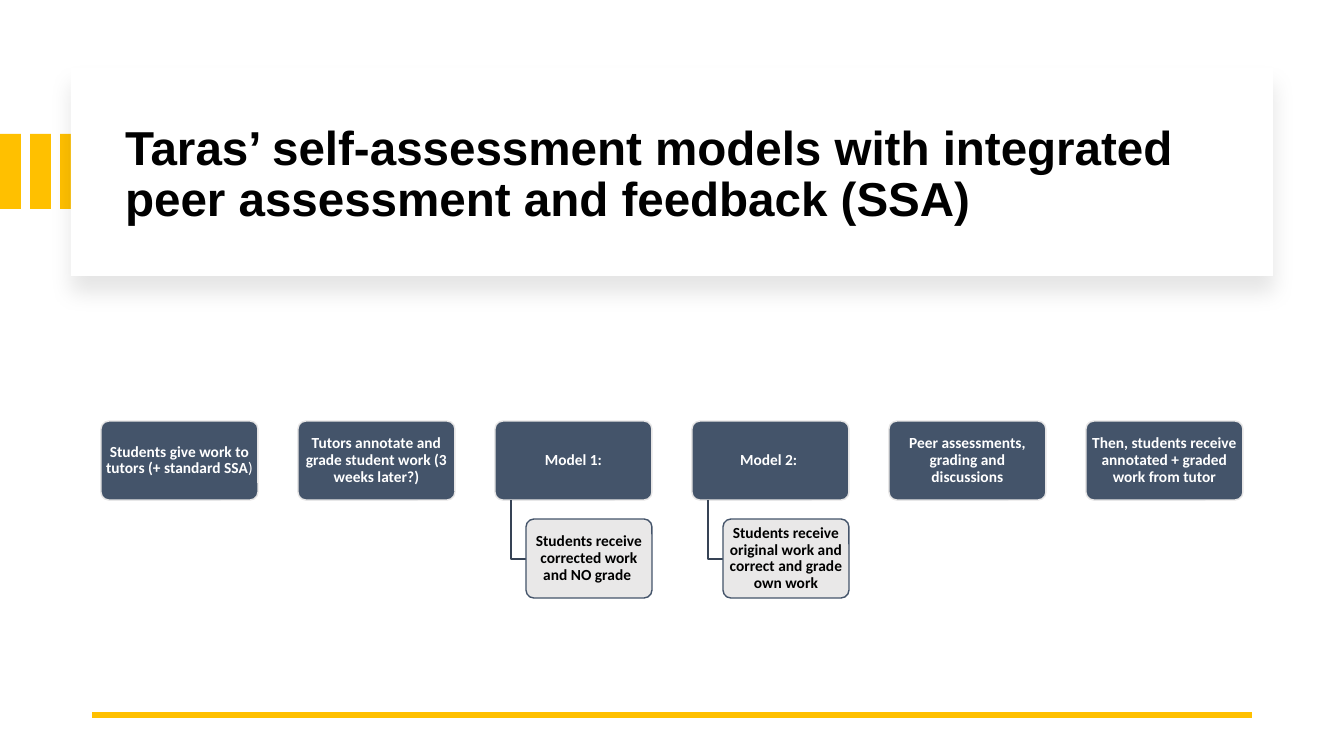
from dataclasses import dataclass

from lxml import etree
from pptx import Presentation
from pptx.dml.color import RGBColor
from pptx.enum.shapes import MSO_CONNECTOR, MSO_SHAPE
from pptx.enum.text import MSO_ANCHOR, MSO_AUTO_SIZE, PP_ALIGN
from pptx.oxml import parse_xml
from pptx.oxml.ns import nsdecls, qn
from pptx.util import Pt

RECT, ROUND_RECT = MSO_SHAPE.RECTANGLE, MSO_SHAPE.ROUNDED_RECTANGLE
STRAIGHT = MSO_CONNECTOR.STRAIGHT
MIDDLE = MSO_ANCHOR.MIDDLE
LEFT, CENTER = PP_ALIGN.LEFT, PP_ALIGN.CENTER
EMU_PER_PX = 914400 / 100.8
TITLE_ONLY = 5


@dataclass(frozen=True)
class Theme:
    accent: str = "FFC000"
    white: str = "FFFFFF"
    black: str = "000000"
    slate: str = "44546A"
    elbow: str = "364355"
    pale: str = "E7E6E6"
    title_font: str = "Arial"
    box_font: str = "Calibri"
    title_size: int = 34
    box_size: int = 11
    thin: int = 1
    thick: float = 4.5


def px(n):
    return round(n * EMU_PER_PX)


def rgb(color):
    return RGBColor.from_string(color)


class SlideBuilder:
    def __init__(self, s, theme):
        self.s = s
        self.theme = theme

    def shape(self, kind, x, y, w, h, fill, line=None):
        sp = self.s.shapes.add_shape(kind, px(x), px(y), px(w), px(h))
        sp.shadow.inherit = False
        sp.fill.solid()
        sp.fill.fore_color.rgb = rgb(fill)
        if line:
            self.stroke(sp, line, self.theme.thin)
        else:
            sp.line.fill.background()
        return sp

    def stroke(self, sp, color, width):
        sp.line.color.rgb = rgb(color)
        sp.line.width = Pt(width)

    def card(self, x, y, w, h):
        """White panel with a soft shadow below it."""
        sp = self.shape(RECT, x, y, w, h, self.theme.white)
        effects = sp._element.spPr.find(qn("a:effectLst"))
        effects.append(parse_xml(
            f'<a:outerShdw {nsdecls("a")} blurRad="{Pt(15)}" dist="{Pt(11)}" '
            f'dir="5400000" algn="t" rotWithShape="0"><a:srgbClr val="{self.theme.black}">'
            '<a:alpha val="10000"/></a:srgbClr></a:outerShdw>'))

    def title(self, text, x, y, w, h):
        sp = self.s.shapes.title
        sp.left, sp.top, sp.width, sp.height = px(x), px(y), px(w), px(h)
        self.s.shapes._spTree.append(sp._element)  # bring above the card
        tf = sp.text_frame
        tf.text = text
        tf.auto_size = MSO_AUTO_SIZE.NONE
        self.format(tf, LEFT, self.theme.title_font, self.theme.title_size, self.theme.black)

    def box(self, text, x, y, w, h, fill, line, color, plain_tail=""):
        """Rounded box with bold text; plain_tail is added in regular weight."""
        sp = self.shape(ROUND_RECT, x, y, w, h, fill, line)
        sp.adjustments[0] = 0.1
        tf = sp.text_frame
        tf.margin_left = tf.margin_right = tf.margin_top = tf.margin_bottom = px(2)
        tf.text = text
        if plain_tail:
            tf.paragraphs[0].add_run().text = plain_tail
        self.format(tf, CENTER, self.theme.box_font, self.theme.box_size, color)
        if plain_tail:
            tf.paragraphs[0].runs[-1].font.bold = False
        return sp

    def format(self, tf, align, font, size, color):
        tf.word_wrap = True
        tf.vertical_anchor = MIDDLE
        p = tf.paragraphs[0]
        p.alignment = align
        p.line_spacing = 0.9
        for r in p.runs:
            r.font.name = font
            r.font.size = Pt(size)
            r.font.bold = True
            r.font.color.rgb = rgb(color)

    def elbow(self, x, y, w, h):
        """Line that drops by h, then runs right by w."""
        path = self.s.shapes.build_freeform(px(x), px(y))
        path.add_line_segments([(px(x), px(y + h)), (px(x + w), px(y + h))], close=False)
        sp = path.convert_to_shape()
        sp.shadow.inherit = False
        sp.fill.background()
        self.stroke(sp, self.theme.elbow, self.theme.thin)

    def rule(self, x1, x2, y):
        line = self.s.shapes.add_connector(STRAIGHT, px(x1), px(y), px(x2), px(y))
        self.stroke(line, self.theme.accent, self.theme.thick)
        etree.SubElement(line._element.spPr, qn("a:effectLst"))

    def step(self, x, y, text, plain_tail="", detail=None):
        """Step box, with an optional detail box hanging below it."""
        t = self.theme
        w, h = 157, 79
        self.box(text, x, y, w, h, t.slate, t.pale, t.white, plain_tail)
        if detail:
            self.elbow(x + 16, y + h, 15, 59)
            sp = self.box(detail, x + 31, y + 98, w - 31, h, t.pale, t.slate, t.black)
            fill = sp._element.spPr.find(qn("a:solidFill"))
            etree.SubElement(fill[0], qn("a:alpha"), val="90000")


STEPS = [
    {"text": "Students give work to tutors (+ standard SSA", "plain_tail": ")"},
    {"text": "Tutors annotate and grade student work (3 weeks later?)"},
    {"text": "Model 1:", "detail": "Students receive corrected work and NO grade "},
    {"text": "Model 2: ",
     "detail": "Students receive original work and correct and grade own work"},
    {"text": "Peer assessments, grading and discussions"},
    {"text": "Then, students receive annotated + graded work from tutor"},
]


def main():
    prs = Presentation()
    prs.slide_width, prs.slide_height = px(1344), px(756)
    s = prs.slides.add_slide(prs.slide_layouts[TITLE_ONLY])
    theme = Theme()
    slide = SlideBuilder(s, theme)

    for i in range(3):
        slide.shape(RECT, i * 30, 134, 21, 75, theme.accent)
    slide.card(71, 68, 1202, 208)
    slide.title("Taras’ self-assessment models with integrated peer assessment "
                "and feedback (SSA)", 115, 90, 1122, 171)
    slide.rule(1252, 92, 715)
    for i, step in enumerate(STEPS):
        slide.step(101 + i * 197, 421, **step)

    prs.save("out.pptx")


if __name__ == "__main__":
    main()
